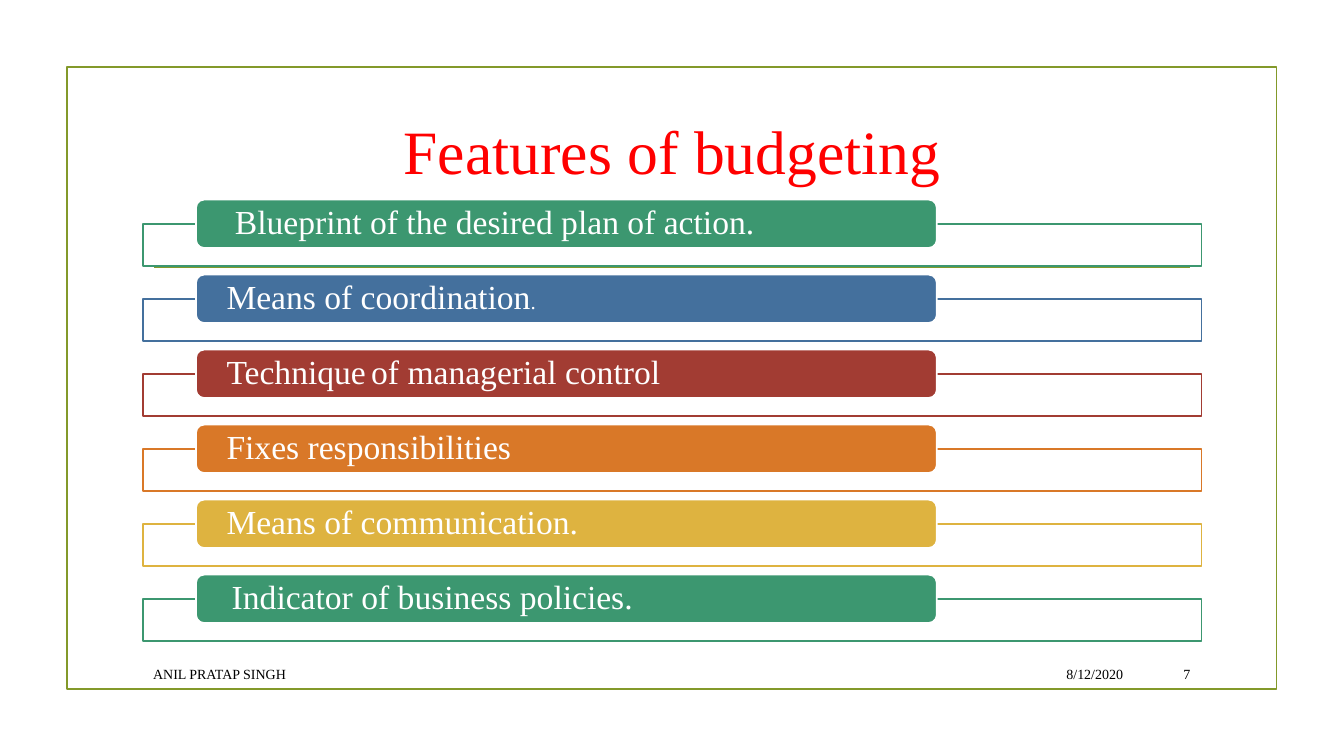
from lxml import etree
from pptx import Presentation
from pptx.dml.color import RGBColor
from pptx.enum.shapes import MSO_CONNECTOR as Connector, MSO_SHAPE as Shape
from pptx.enum.text import MSO_ANCHOR as Anchor, PP_ALIGN as Align
from pptx.oxml.ns import qn
from pptx.util import Cm, Pt


def color(hex_value):
    return RGBColor.from_string(hex_value)


def add_text(frame, parts, text_color, align=Align.LEFT):
    """Write (text, size) parts as one vertically centred paragraph."""
    frame.word_wrap = True
    frame.vertical_anchor = Anchor.MIDDLE
    para = frame.paragraphs[0]
    para.alignment = align
    for text, size in parts:
        span = para.add_run()
        span.text = text
        span.font.name = "Times New Roman"
        span.font.size = Pt(size)
        span.font.color.rgb = color(text_color)
    return para


deck = Presentation()
deck.slide_width, deck.slide_height = Cm(33.87), Cm(19.05)
page = deck.slides.add_slide(deck.slide_layouts[6])

# Frame and rule
frame_box = page.shapes.add_shape(Shape.RECTANGLE, Cm(1.69), Cm(1.69), Cm(30.48), Cm(15.68))
frame_box.shadow.inherit = False
frame_box.fill.background()
frame_box.line.color.rgb = color("83992A")
frame_box.line.width = Pt(1.25)

rule = page.shapes.add_connector(Connector.STRAIGHT, Cm(3.88), Cm(6.73), Cm(30), Cm(6.73))
rule.line.color.rgb = color("83992A")
rule.line.width = Pt(1.25)
etree.SubElement(rule.element.spPr, qn("a:effectLst"))

# Feature rows: an outlined bar behind a coloured label
features = [
    ("3C9770", [(" Blueprint of the desired plan of action.", 24)]),
    ("44709D", [("Means of coordination", 24), (".", 15)]),
    ("A23C33", [("Technique", 24), (" ", 15), ("of managerial control", 24)]),
    ("D97828", [("Fixes responsibilities", 24)]),
    ("DEB340", [("Means of communication.", 24)]),
    ("3C9770", [(" ", 15), ("Indicator of business policies.", 24)]),
]
for row, (accent, parts) in enumerate(features):
    top = 5.03 + 1.89 * row
    bar = page.shapes.add_shape(Shape.RECTANGLE, Cm(3.61), Cm(top + 0.61), Cm(26.67), Cm(1.06))
    label = page.shapes.add_shape(Shape.ROUNDED_RECTANGLE, Cm(4.94), Cm(top), Cm(18.67), Cm(1.22))
    for box, fill, line in ((bar, "FFFFFF", accent), (label, accent, "FFFFFF")):
        box.shadow.inherit = False
        box.fill.solid()
        box.fill.fore_color.rgb = color(fill)
        box.line.color.rgb = color(line)
        box.line.width = Pt(1.25)
    bar_fill = bar.element.spPr.find(qn("a:solidFill"))
    etree.SubElement(bar_fill[0], qn("a:alpha"), val="90000")

    label_frame = label.text_frame
    label_frame.margin_left = label_frame.margin_right = Cm(0.71)
    label_frame.margin_top = label_frame.margin_bottom = 0
    para = add_text(label_frame, parts, "FFFFFF")
    para.line_spacing = 0.9

# Title and footer
texts = [
    ("Features of budgeting", 44, "FF0000", Align.CENTER, 3.61, 2.72, 26.67, 2.13),
    ("8/12/2020", 10, "000000", Align.RIGHT, 24.1, 16.59, 4.45, 0.79),
    ("ANIL PRATAP SINGH", 10, "000000", Align.LEFT, 3.61, 16.59, 20.29, 0.79),
    ("7", 10, "000000", Align.RIGHT, 28.75, 16.59, 1.5, 0.79),
]
for text, size, text_color, align, left, top, width, height in texts:
    box = page.shapes.add_textbox(Cm(left), Cm(top), Cm(width), Cm(height))
    add_text(box.text_frame, [(text, size)], text_color, align)

deck.save("out.pptx")
